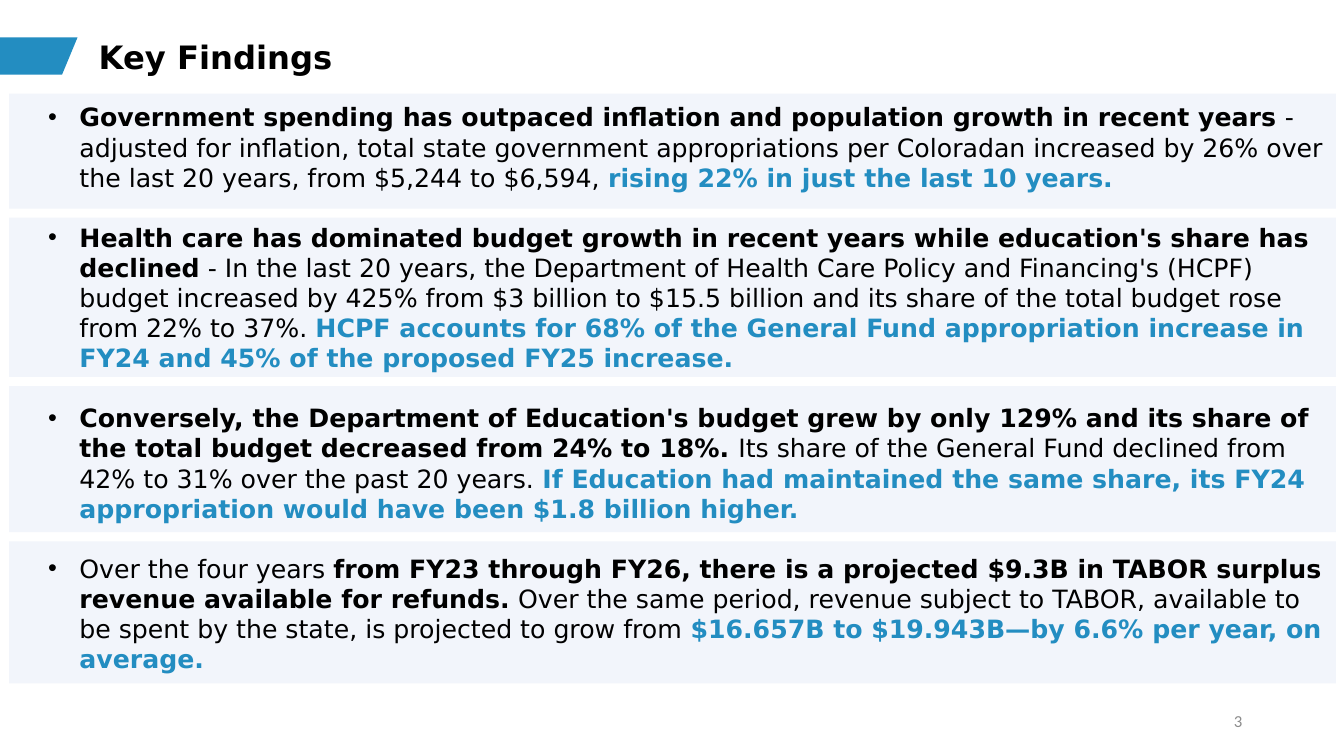
from dataclasses import dataclass

from lxml import etree
from pptx import Presentation
from pptx.dml.color import RGBColor
from pptx.enum.shapes import MSO_SHAPE
from pptx.enum.text import MSO_ANCHOR, PP_ALIGN
from pptx.oxml.ns import qn
from pptx.util import Inches, Pt

RECTANGLE = MSO_SHAPE.RECTANGLE
MANUAL_INPUT = MSO_SHAPE.FLOWCHART_MANUAL_INPUT
TOP, MIDDLE = MSO_ANCHOR.TOP, MSO_ANCHOR.MIDDLE
LEFT, RIGHT = PP_ALIGN.LEFT, PP_ALIGN.RIGHT

BLACK = RGBColor(0x00, 0x00, 0x00)
BLUE = RGBColor(0x23, 0x8D, 0xC1)
PALE_BLUE = RGBColor(0xF2, 0xF5, 0xFB)
GREY = RGBColor(0x8C, 0x8C, 0x8C)

BODY_FONT, NUMBER_FONT = "DejaVu Sans", "Calibri"
SLIDE_WIDTH, SLIDE_HEIGHT = Inches(13.33), Inches(7.5)
BULLET_INDENT = Inches(0.31)
FINDING_GAP = Pt(21)

# Panel stack, in percent of the slide's size
PANEL_LEFT, PANEL_WIDTH = 0.68, 98.72
FIRST_PANEL_TOP, PANEL_GAP = 12.4, 1.2


@dataclass(frozen=True)
class Area:
    """A rectangle in percent of the slide's width and height."""
    left: float
    top: float
    width: float
    height: float

    def lengths(self) -> tuple[int, int, int, int]:
        return (int(SLIDE_WIDTH * self.left / 100), int(SLIDE_HEIGHT * self.top / 100),
                int(SLIDE_WIDTH * self.width / 100), int(SLIDE_HEIGHT * self.height / 100))


@dataclass(frozen=True)
class Phrase:
    text: str
    bold: bool = False
    color: RGBColor = BLACK


@dataclass(frozen=True)
class Finding:
    panel_height: float
    phrases: tuple[Phrase, ...]


TITLE_AREA = Area(6.6, 2.93, 86.27, 9.07)
TAB_AREA = Area(1.5, 2.27, 2.78, 10.27)
FINDINGS_AREA = Area(2.85, 12.8, 96.55, 78.67)
NUMBER_AREA = Area(70.67, 92.67, 22.51, 5.33)

FINDINGS = (
    Finding(15.2, (
        Phrase("Government spending has outpaced inflation and population growth in recent years", True),
        Phrase(" - adjusted for inflation, total state government appropriations per Coloradan "
               "increased by 26% over the last 20 years, from $5,244 to $6,594, "),
        Phrase("rising 22% in just the last 10 years.", True, BLUE))),
    Finding(21.07, (
        Phrase("Health care has dominated budget growth in recent years while education's share "
               "has declined", True),
        Phrase(" - In the last 20 years, the Department of Health Care Policy and Financing's "
               "(HCPF) budget increased by 425% from $3 billion to $15.5 billion and its share "
               "of the total budget rose from 22% to 37%. "),
        Phrase("HCPF accounts for 68% of the General Fund appropriation increase in FY24 and "
               "45% of the proposed FY25 increase.", True, BLUE))),
    Finding(19.33, (
        Phrase("Conversely, the Department of Education's budget grew by only 129% and its share "
               "of the total budget decreased from 24% to 18%. ", True),
        Phrase("Its share of the General Fund declined from 42% to 31% over the past 20 years. "),
        Phrase("If Education had maintained the same share, its FY24 appropriation would have "
               "been $1.8 billion higher.", True, BLUE))),
    Finding(18.8, (
        Phrase("Over the four years "),
        Phrase("from FY23 through FY26, there is a projected $9.3B in TABOR surplus revenue "
               "available for refunds.", True),
        Phrase(" Over the same period, revenue subject to TABOR, available to be spent by the "
               "state, is projected to grow from "),
        Phrase("$16.657B to $19.943B—by 6.6% per year, on average.", True, BLUE))),
)


def add_block(page, preset, area: Area, color: RGBColor):
    block = page.shapes.add_shape(preset, *area.lengths())
    block.shadow.inherit = False
    block.fill.solid()
    block.fill.fore_color.rgb = color
    block.line.fill.background()
    return block


def add_text_frame(page, area: Area, anchor):
    frame = page.shapes.add_textbox(*area.lengths()).text_frame
    frame.word_wrap = True
    frame.vertical_anchor = anchor
    return frame


def add_label(page, area: Area, phrase: Phrase, font_name: str, size: float, alignment) -> None:
    para = add_text_frame(page, area, MIDDLE).paragraphs[0]
    para.text = phrase.text
    para.alignment = alignment
    para.font.name = font_name
    para.font.size = Pt(size)
    para.font.bold = phrase.bold
    para.font.color.rgb = phrase.color


def set_bullet(para) -> None:
    properties = para._p.get_or_add_pPr()
    properties.set("marL", str(BULLET_INDENT))
    properties.set("indent", str(-BULLET_INDENT))
    defaults = properties.find(qn("a:defRPr"))
    defaults.addprevious(etree.Element(qn("a:buFont"), typeface="Arial"))
    defaults.addprevious(etree.Element(qn("a:buChar"), char="•"))


def add_findings(page) -> None:
    # Panels behind the text
    top = FIRST_PANEL_TOP
    for finding in FINDINGS:
        add_block(page, RECTANGLE, Area(PANEL_LEFT, top, PANEL_WIDTH, finding.panel_height), PALE_BLUE)
        top += finding.panel_height + PANEL_GAP

    # One bulleted paragraph per finding
    frame = add_text_frame(page, FINDINGS_AREA, TOP)
    for index, finding in enumerate(FINDINGS):
        para = frame.add_paragraph() if index else frame.paragraphs[0]
        para.font.name = BODY_FONT
        para.font.size = Pt(18)
        para.space_after = FINDING_GAP
        set_bullet(para)
        for phrase in finding.phrases:
            span = para.add_run()
            span.text = phrase.text
            span.font.bold = phrase.bold
            span.font.color.rgb = phrase.color


def main() -> None:
    deck = Presentation()
    deck.slide_width, deck.slide_height = SLIDE_WIDTH, SLIDE_HEIGHT
    page = deck.slides.add_slide(deck.slide_layouts[6])

    add_findings(page)

    # Heading with its slanted tab
    add_label(page, TITLE_AREA, Phrase("Key Findings", True), BODY_FONT, 23, LEFT)
    tab = add_block(page, MANUAL_INPUT, TAB_AREA, BLUE)
    tab.rotation = 90
    tab._element.spPr.find(qn("a:xfrm")).set("flipH", "1")

    # Slide number
    add_label(page, NUMBER_AREA, Phrase("3", color=GREY), NUMBER_FONT, 12, RIGHT)
    deck.save("out.pptx")


if __name__ == "__main__":
    main()
